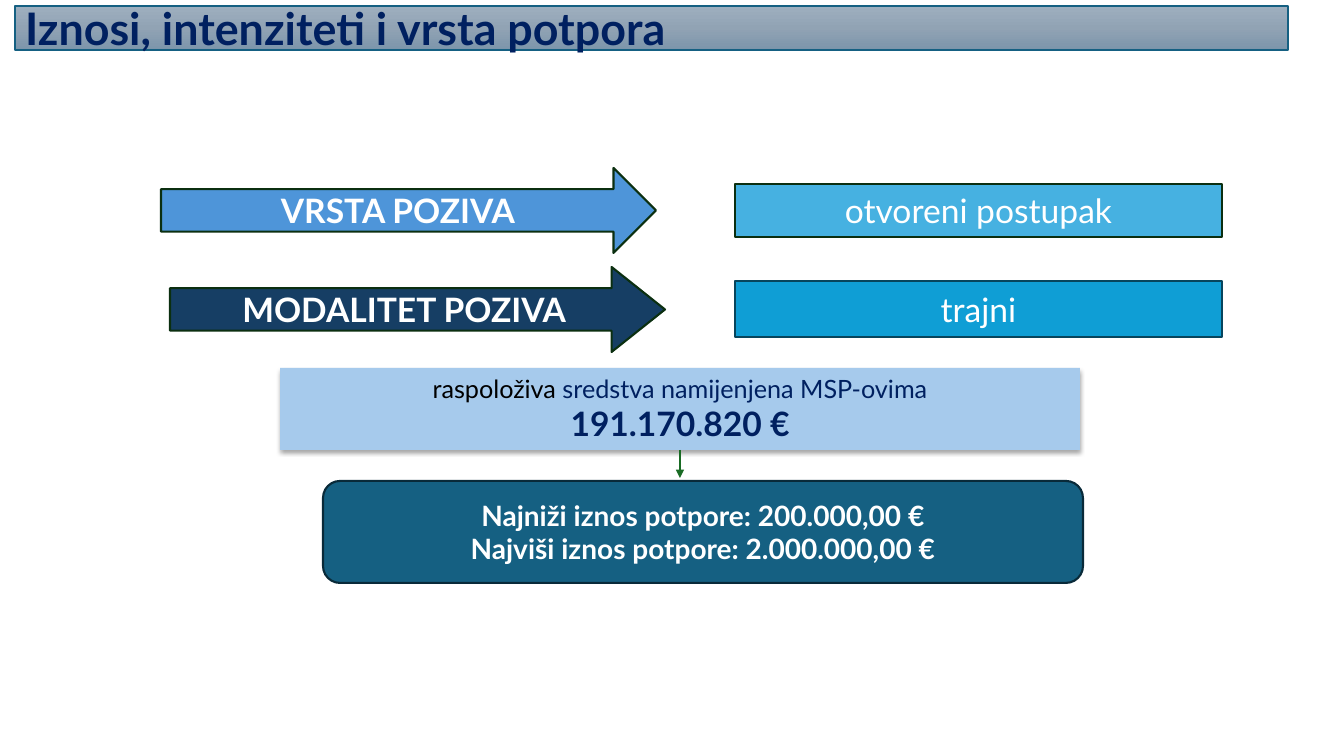
"""Build the slide on amounts, intensities and type of support."""
import copy

import lxml.etree
import pptx
import pptx.dml.color
import pptx.enum.shapes
import pptx.enum.text
import pptx.oxml
import pptx.oxml.ns
import pptx.util

RGBColor = pptx.dml.color.RGBColor
SHAPE = pptx.enum.shapes.MSO_SHAPE
ALIGN = pptx.enum.text.PP_ALIGN
ANCHOR = pptx.enum.text.MSO_ANCHOR

WHITE = RGBColor(0xFF, 0xFF, 0xFF)
BLACK = RGBColor(0x00, 0x00, 0x00)
NAVY = RGBColor(0x00, 0x20, 0x60)
DARK_GREEN = RGBColor(0x0B, 0x2F, 0x10)
GREEN = RGBColor(0x19, 0x6B, 0x24)
ARROW_BLUE = RGBColor(0x4E, 0x95, 0xD9)
ARROW_NAVY = RGBColor(0x16, 0x3E, 0x64)
SKY = RGBColor(0x46, 0xB1, 0xE1)
CYAN = RGBColor(0x0F, 0x9E, 0xD5)
CYAN_EDGE = RGBColor(0x07, 0x45, 0x5D)
PALE = RGBColor(0xA6, 0xCA, 0xEC)
TEAL = RGBColor(0x15, 0x60, 0x82)
TEAL_EDGE = RGBColor(0x09, 0x2A, 0x39)
TITLE_STOPS = [
    (0, RGBColor(0x9E, 0xAF, 0xBF)),
    (0.5, RGBColor(0x91, 0xA3, 0xB4)),
    (1, RGBColor(0x7C, 0x95, 0xAB)),
]

FONT = "Lato"
PX = 914400 / 100.8
PAGE_SIZE = (1344, 756)
TITLE = "Iznosi, intenziteti i vrsta potpora"
TITLE_FRAME = (15, 6, 1273, 44)
FUNDS_FRAME = (280, 368, 800, 82)
FUNDS = [
    [("raspoloživa ", 18, BLACK, False), ("sredstva namijenjena MSP-ovima", 18, NAVY, False)],
    [("191.170.820 €", 24, NAVY, True)],
]
LIMITS_FRAME = (323, 481, 760, 102)
LIMITS = ["Najniži iznos potpore: 200.000,00 €", "Najviši iznos potpore: 2.000.000,00 €"]
LINK_GAP = 28
CALL_ROWS = [
    ("VRSTA POZIVA", (161, 168, 495, 85), 0.5, ARROW_BLUE,
     "otvoreni postupak", (735, 184, 487, 53), SKY, DARK_GREEN),
    ("MODALITET POZIVA", (170, 267, 495, 85), 0.628, ARROW_NAVY,
     "trajni", (735, 281, 487, 56), CYAN, CYAN_EDGE),
]


def emu(px):
    """Turn px into EMU."""
    return pptx.util.Emu(round(px * PX))


def add_span(para, text, size=24, color=WHITE, bold=False):
    """Add formatted text to a paragraph."""
    span = para.add_run()
    span.text = text
    span.font.name = FONT
    span.font.size = pptx.util.Pt(size)
    span.font.bold = bold
    span.font.color.rgb = color


def write(box, lines, align=ALIGN.CENTER, anchor=ANCHOR.MIDDLE):
    """Write lines of spans into a box."""
    frame = box.text_frame
    frame.word_wrap = True
    frame.auto_size = pptx.enum.text.MSO_AUTO_SIZE.NONE
    frame.vertical_anchor = anchor
    for index, spans in enumerate(lines):
        para = frame.add_paragraph() if index else frame.paragraphs[0]
        para.alignment = align
        for span in spans:
            add_span(para, *span)


def add_box(page, kind, frame, fill, edge=None):
    """Add a filled shape, outlined when an edge colour is given."""
    box = page.shapes.add_shape(kind, *map(emu, frame))
    box.shadow.inherit = False
    box.fill.solid()
    box.fill.fore_color.rgb = fill
    if edge is None:
        box.line.fill.background()
    else:
        box.line.color.rgb = edge
        box.line.width = pptx.util.Pt(1.5)
    return box


def add_title(page):
    """Format the title placeholder as a gradient bar."""
    title = page.shapes.title
    title.left, title.top, title.width, title.height = map(emu, TITLE_FRAME)
    title.fill.gradient()
    stops = title.element.spPr.find(".//" + pptx.oxml.ns.qn("a:gsLst"))
    stops.insert(1, copy.deepcopy(stops[0]))
    for stop, (position, color) in zip(title.fill.gradient_stops, TITLE_STOPS):
        stop.position = position
        stop.color.rgb = color
    title.fill.gradient_angle = 270
    title.line.color.rgb = TEAL
    title.line.width = pptx.util.Pt(1)
    write(title, [[(TITLE, 32, NAVY, True)]], align=ALIGN.LEFT)


def add_funds(page):
    """Add the shadowed box of available funds."""
    box = add_box(page, SHAPE.RECTANGLE, FUNDS_FRAME, PALE)
    effects = box.element.spPr.find(pptx.oxml.ns.qn("a:effectLst"))
    effects.append(pptx.oxml.parse_xml(
        f'<a:outerShdw {pptx.oxml.ns.nsdecls("a")} blurRad="39370" dist="22860" '
        'dir="5400000" rotWithShape="0"><a:srgbClr val="000000">'
        '<a:alpha val="35000"/></a:srgbClr></a:outerShdw>'))
    write(box, FUNDS, anchor=ANCHOR.TOP)


def add_link(page):
    """Add the arrow leading down from the funds box."""
    left, top, width, height = FUNDS_FRAME
    center, bottom = left + width / 2, top + height
    link = page.shapes.add_connector(
        pptx.enum.shapes.MSO_CONNECTOR.STRAIGHT,
        *map(emu, (center, bottom, center, bottom + LINK_GAP)))
    link.line.color.rgb = GREEN
    link.line.width = pptx.util.Pt(1)
    outline = link.line._get_or_add_ln()
    lxml.etree.SubElement(outline, pptx.oxml.ns.qn("a:tailEnd"), type="triangle")
    lxml.etree.SubElement(link.element.spPr, pptx.oxml.ns.qn("a:effectLst"))


def main():
    """Build and save the deck."""
    deck = pptx.Presentation()
    deck.slide_width, deck.slide_height = map(emu, PAGE_SIZE)
    page = deck.slides.add_slide(deck.slide_layouts[5])
    add_title(page)
    add_funds(page)
    for label, arrow_frame, head, fill, value, value_frame, value_fill, edge in CALL_ROWS:
        arrow = add_box(page, SHAPE.RIGHT_ARROW, arrow_frame, fill, DARK_GREEN)
        arrow.adjustments[1] = head
        write(arrow, [[(label, 24, WHITE, True)]])
        box = add_box(page, SHAPE.RECTANGLE, value_frame, value_fill, edge)
        write(box, [[(value,)]])
    limits = add_box(page, SHAPE.ROUNDED_RECTANGLE, LIMITS_FRAME, TEAL, TEAL_EDGE)
    write(limits, [[(line, 20, WHITE, True)] for line in LIMITS])
    add_link(page)
    deck.save("out.pptx")


if __name__ == "__main__":
    main()
